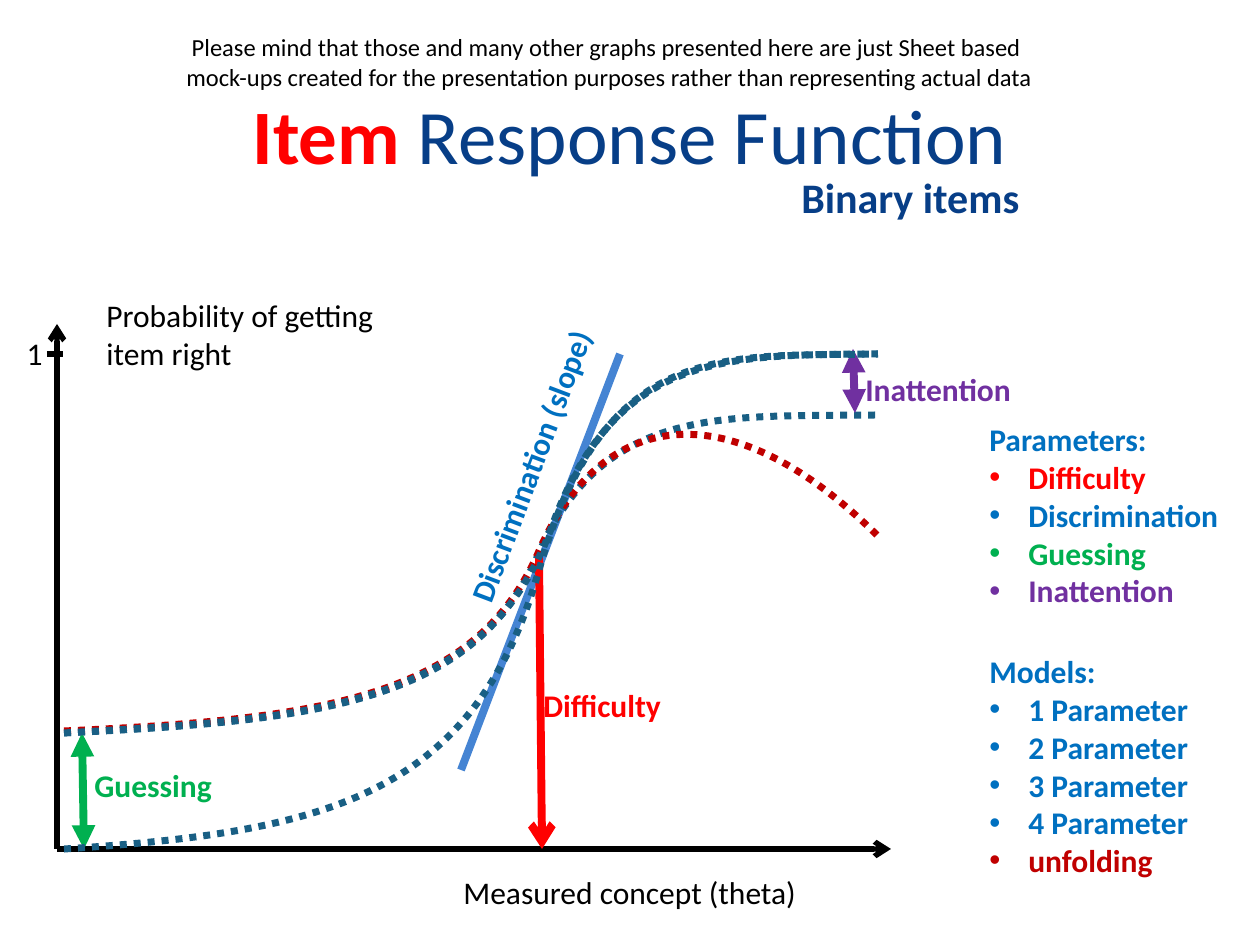
import pptx
import pptx.util
import pptx.dml.color
import pptx.enum.dml
import pptx.enum.shapes
import pptx.enum.text
import pptx.oxml.ns
from lxml import etree

PX = 914400 / 126  # EMU per px; the slide is 1260 x 945 px

THEME = {
    "font": "Calibri", "title": 44, "subtitle": 24, "body": 18, "note": 14,
    "black": "000000", "navy": "073E87", "blue": "0070C0", "slope": "4584D3",
    "curve": "195F84", "red": "FF0000", "dark red": "C00000",
    "green": "00B050", "purple": "7030A0",
}
qn = pptx.oxml.ns.qn
align = pptx.enum.text.PP_ALIGN

deck = pptx.Presentation()
deck.slide_width, deck.slide_height = round(1260 * PX), round(945 * PX)
slide = deck.slides.add_slide(deck.slide_layouts[6])
shapes = slide.shapes


def add_text(box, lines, size="body", bold=False, alignment=None, wrap=True, parent=shapes):
    """Add a text box; each line is a list of (text, colour) runs."""
    label = parent.add_textbox(*(round(v * PX) for v in box))
    frame = label.text_frame
    frame.word_wrap = wrap
    for i, runs in enumerate(lines):
        paragraph = frame.paragraphs[0] if i == 0 else frame.add_paragraph()
        paragraph.alignment = alignment
        for text, colour in runs:
            run = paragraph.add_run()
            run.text = text
            run.font.name = THEME["font"]
            run.font.size = pptx.util.Pt(THEME[size])
            run.font.bold = bold
            run.font.color.rgb = pptx.dml.color.RGBColor.from_string(THEME[colour])
    return label


def add_line(start, end, colour, width, head=None, tail=None, parent=shapes):
    line = parent.add_connector(pptx.enum.shapes.MSO_CONNECTOR.STRAIGHT,
                                *(round(v * PX) for v in start + end))
    line.line.color.rgb = pptx.dml.color.RGBColor.from_string(THEME[colour])
    line.line.width = pptx.util.Pt(width)
    outline = line.line._get_or_add_ln()
    for tag, kind in (("a:headEnd", head), ("a:tailEnd", tail)):
        if kind:
            etree.SubElement(outline, qn(tag), type=kind)
    etree.SubElement(line._element.spPr, qn("a:effectLst"))


# Heading
title = add_text((63, 47, 1134, 173),
                 [[("Item ", "red"), ("Response Function", "navy")]],
                 "title", alignment=align.CENTER)
title.text_frame.vertical_anchor = pptx.enum.text.MSO_ANCHOR.MIDDLE
title.text_frame.paragraphs[0].runs[0].font.bold = True
add_text((789, 165, 326, 86), [[("Binary items", "navy")]], "subtitle", bold=True)

# Axes
origin = (57, 849)
add_line(origin, (57, 324), "black", 3, tail="arrow")
add_line(origin, (891, 849), "black", 3, tail="arrow")
add_line((47, 354), (63, 354), "black", 3)
for box, text in (
    ((451, 867, 546, 50), "Measured concept (theta)"),
    ((94, 290, 348, 89), "Probability of getting item right"),
):
    add_text(box, [[(text, "black")]])
add_text((15, 328, 24, 50), [[("1", "black")]], wrap=False)

# Slope at the inflection point
add_line((620, 354), (461, 770), "slope", 4.5)
slope_label = add_text((368, 432, 331, 50), [[("Discrimination (slope)", "blue")]], bold=True)
slope_label.rotation = 290.6

# Response curves: colour, top edge, and two cubic Bezier pieces that share a middle point
curves = [
    ("curve", 415, [(64, 733), (321, 721), (475, 702), (539, 553), (605, 404), (725, 417), (878, 415)]),
    ("dark red", 435, [(64, 731), (321, 719), (475, 699), (539, 551), (605, 402), (735, 394), (879, 537)]),
    ("curve", 354, [(64, 849), (320, 832), (474, 800), (539, 570), (605, 338), (725, 357), (878, 354)]),
    ("curve", 354, [(64, 733), (320, 719), (485, 706), (551, 529), (615, 352), (725, 355), (878, 354)]),
]
parameter_arrows = [
    ("Difficulty", "red", (539, 553), (542, 849), (531, 680), None, "arrow"),
    ("Guessing", "green", (82, 733), (84, 849), (82, 760), "triangle", "triangle"),
    ("Inattention", "purple", (853, 349), (855, 413), (853, 364), "triangle", "triangle"),
]
for number, (colour, top, controls) in enumerate(curves):
    # The parameter arrows lie above the first curve and below the others
    if number == 1:
        for name, ink, start, end, corner, head, tail in parameter_arrows:
            group = shapes.add_group_shape().shapes
            add_line(start, end, ink, 4.5, head, tail, parent=group)
            add_text(corner + (263, 50), [[(name, ink)]], bold=True, parent=group)
    # Span the bounds from bottom left to top right, then bend the outline
    left, bottom = controls[0]
    right = controls[-1][0]
    builder = shapes.build_freeform(left * PX, bottom * PX)
    builder.add_line_segments([(right * PX, top * PX)], close=False)
    curve = builder.convert_to_shape()
    outline = curve._element.find(".//" + qn("a:path"))
    for segment in list(outline):
        outline.remove(segment)
    for tag, points in (("a:moveTo", controls[:1]), ("a:cubicBezTo", controls[1:4]),
                        ("a:cubicBezTo", controls[4:])):
        segment = etree.SubElement(outline, qn(tag))
        for x, y in points:
            etree.SubElement(segment, qn("a:pt"), x=str(round((x - left) * PX)),
                             y=str(round((y - top) * PX)))
    curve.shadow.inherit = False
    curve.fill.background()
    curve.line.color.rgb = pptx.dml.color.RGBColor.from_string(THEME[colour])
    curve.line.width = pptx.util.Pt(4)
    curve.line.dash_style = pptx.enum.dml.MSO_LINE.ROUND_DOT

# Bulleted lists of parameters and models
lists = [
    ((977, 414, 263, 204), "Parameters:",
     [("Difficulty", "red"), ("Discrimination", "blue"),
      ("Guessing", "green"), ("Inattention", "purple")]),
    ((977, 646, 236, 242), "Models:",
     [(f"{n} Parameter", "blue") for n in range(1, 5)] + [("unfolding", "dark red")]),
]
indent = round(39 * PX)
for box, heading, items in lists:
    listing = add_text(box, [[(heading, "blue")]] + [[item] for item in items], bold=True)
    for paragraph in listing.text_frame.paragraphs[1:]:
        properties = paragraph._p.get_or_add_pPr()
        properties.set("marL", str(indent))
        properties.set("indent", str(-indent))
        etree.SubElement(properties, qn("a:buFont"), typeface="Arial")
        etree.SubElement(properties, qn("a:buChar"), char="•")

# Note above the title
add_text((142, 26, 935, 72), [
    [("Please mind that those and many other graphs presented here are just Sheet based ", "black")],
    [("mock-ups created for the presentation purposes rather than representing actual data", "black")],
], "note", alignment=align.CENTER, wrap=False)

deck.save("out.pptx")
